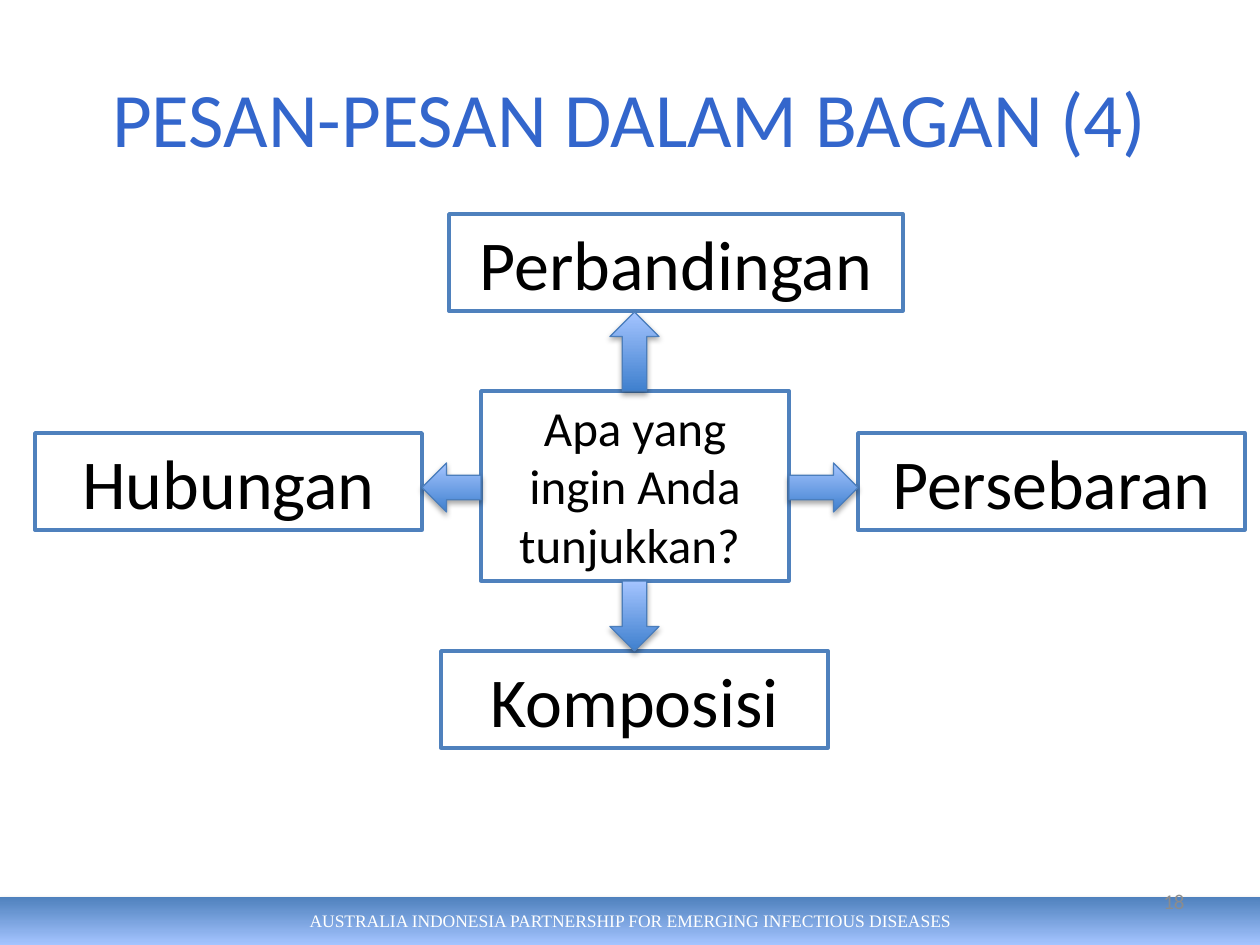
from dataclasses import dataclass

from lxml import etree
from pptx import Presentation
from pptx.dml.color import RGBColor
from pptx.enum.shapes import MSO_SHAPE
from pptx.enum.text import MSO_ANCHOR, MSO_AUTO_SIZE, PP_ALIGN
from pptx.oxml.ns import qn
from pptx.shapes.autoshape import Shape
from pptx.slide import Slide
from pptx.util import Emu, Pt

RECT = MSO_SHAPE.RECTANGLE
UP, DOWN = MSO_SHAPE.UP_ARROW, MSO_SHAPE.DOWN_ARROW
LEFT, RIGHT = MSO_SHAPE.LEFT_ARROW, MSO_SHAPE.RIGHT_ARROW
MIDDLE, TOP = MSO_ANCHOR.MIDDLE, MSO_ANCHOR.TOP
CENTER, END = PP_ALIGN.CENTER, PP_ALIGN.RIGHT
GROW = MSO_AUTO_SIZE.SHAPE_TO_FIT_TEXT

SCALE = 914400 / 126
WIDE, HIGH = 1260, 945
BLUE, PALE = "4F81BD", "A4C4FF"
SANS, SERIF = "Calibri", "Times New Roman"
THICK = 49  # width of an arrow across its heads


@dataclass(frozen=True)
class Area:
    x: int
    y: int
    w: int
    h: int

    def emu(self) -> list[Emu]:
        return [px(n) for n in (self.x, self.y, self.w, self.h)]


@dataclass(frozen=True)
class Box:
    text: str
    area: Area
    size: int = 40


@dataclass(frozen=True)
class Arrow:
    kind: MSO_SHAPE
    area: Area


def px(n: int) -> Emu:
    return Emu(round(n * SCALE))


def color(code: str) -> RGBColor:
    return RGBColor.from_string(code)


def write(shape: Shape, text: str, size: int, code: str, font: str = SANS,
          align: PP_ALIGN = CENTER, anchor: MSO_ANCHOR = MIDDLE) -> None:
    frame = shape.text_frame
    frame.word_wrap = True
    frame.vertical_anchor = anchor
    para = frame.paragraphs[0]
    para.alignment = align
    run = para.add_run()
    run.text = text
    run.font.size = Pt(size)
    run.font.name = font
    run.font.color.rgb = color(code)


def blend(shape: Shape, first: str, last: str, angle: int) -> None:
    """Fill with two colours; the angle runs counter-clockwise."""
    shape.fill.gradient()
    shape.fill.gradient_angle = angle
    for stop, code in zip(shape.fill.gradient_stops, (first, last)):
        stop.color.rgb = color(code)


def shade(shape: Shape) -> None:
    """Cast a soft shadow straight down."""
    shape.shadow.inherit = False
    effects = shape._element.spPr.find(qn("a:effectLst"))
    outer = etree.SubElement(effects, qn("a:outerShdw"), blurRad="40000",
                             dist="23000", dir="5400000", rotWithShape="0")
    tint = etree.SubElement(outer, qn("a:srgbClr"), val="000000")
    etree.SubElement(tint, qn("a:alpha"), val="35000")


def add_bar(slide: Slide) -> None:
    bar = slide.shapes.add_shape(RECT, *Area(0, 897, WIDE, 48).emu())
    blend(bar, BLUE, PALE, 270)
    bar.line.fill.background()
    shade(bar)
    write(bar, "AUSTRALIA INDONESIA PARTNERSHIP FOR EMERGING INFECTIOUS DISEASES",
          10, "FFFFFF", SERIF)


def add_box(slide: Slide, box: Box) -> None:
    shape = slide.shapes.add_shape(RECT, *box.area.emu())
    shape.shadow.inherit = False
    shape.fill.solid()
    shape.fill.fore_color.rgb = color("FFFFFF")
    shape.line.color.rgb = color(BLUE)
    shape.line.width = Pt(2)
    write(shape, box.text, box.size, "000000", anchor=TOP)
    shape.text_frame.auto_size = GROW


def add_arrow(slide: Slide, arrow: Arrow) -> None:
    shape = slide.shapes.add_shape(arrow.kind, *arrow.area.emu())
    blend(shape, "3F80CE", PALE, 90)
    shape.line.color.rgb = color("4B7EBC")
    shape.line.width = Pt(0.75)
    shade(shape)


BOXES = [
    Box("Apa yang ingin Anda tunjukkan? ", Area(481, 391, 308, 190), 28),
    Box("Hubungan", Area(35, 433, 387, 97)),
    Box("Komposisi", Area(441, 651, 387, 97)),
    Box("Persebaran", Area(858, 433, 387, 97)),
    Box("Perbandingan", Area(449, 214, 454, 97)),
]

ARROWS = [
    Arrow(UP, Area(610, 312, THICK, 79)),
    Arrow(DOWN, Area(610, 581, THICK, 70)),
    Arrow(RIGHT, Area(789, 463, 69, THICK)),
    Arrow(LEFT, Area(422, 463, 59, THICK)),
]


def main() -> None:
    deck = Presentation()
    deck.slide_width, deck.slide_height = px(WIDE), px(HIGH)
    slide = deck.slides.add_slide(deck.slide_layouts[6])
    add_bar(slide)
    number = slide.shapes.add_textbox(*Area(903, 876, 294, 50).emu())
    write(number, "18", 12, "8C8C8C", align=END)
    title = slide.shapes.add_textbox(*Area(63, 38, 1134, 157).emu())
    write(title, "PESAN-PESAN DALAM BAGAN (4)", 44, "3366CC")
    for box in BOXES:
        add_box(slide, box)
    for arrow in ARROWS:
        add_arrow(slide, arrow)
    deck.save("out.pptx")


if __name__ == "__main__":
    main()
